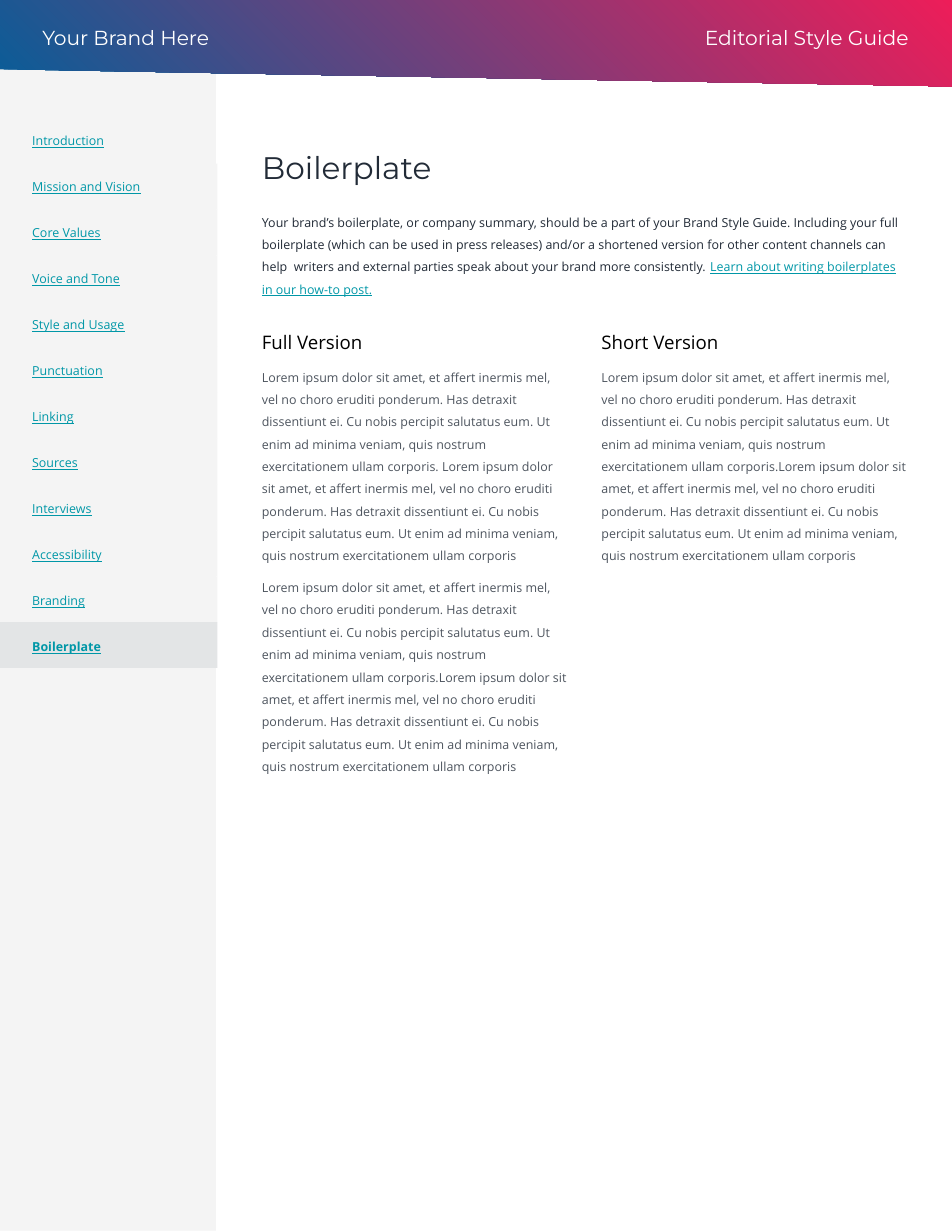
import pptx
import pptx.util
import pptx.dml.color
import pptx.enum.shapes
import pptx.enum.text

Cm = pptx.util.Cm
Pt = pptx.util.Pt
RGBColor = pptx.dml.color.RGBColor
Kind = pptx.enum.shapes.MSO_SHAPE
Align = pptx.enum.text.PP_ALIGN
Anchor = pptx.enum.text.MSO_ANCHOR

WHITE = RGBColor(0xFF, 0xFF, 0xFF)
BLACK = RGBColor(0x00, 0x00, 0x00)
PALE = RGBColor(0xF4, 0xF4, 0xF4)
SILVER = RGBColor(0xE3, 0xE5, 0xE6)
BLUE = RGBColor(0x09, 0x5D, 0x98)
RED = RGBColor(0xED, 0x1D, 0x59)
NAVY = RGBColor(0x22, 0x2B, 0x37)
GREY = RGBColor(0x4E, 0x55, 0x5F)
TEAL = RGBColor(0x00, 0x97, 0xA7)

HEAD = "Montserrat"
BODY = "Open Sans"

LOREM = (
    "Lorem ipsum dolor sit amet, et affert inermis mel, vel no choro eruditi "
    "ponderum. Has detraxit dissentiunt ei. Cu nobis percipit salutatus eum. "
    "Ut enim ad minima veniam, quis nostrum exercitationem ullam corporis"
)
SPACED = LOREM + ". " + LOREM
TIGHT = LOREM + "." + LOREM
INTRO = (
    "Your brand’s boilerplate, or company summary, should be a part of your "
    "Brand Style Guide. Including your full boilerplate (which can be used in "
    "press releases) and/or a shortened version for other content channels can "
    "help  writers and external parties speak about your brand more consistently. "
)
LINK = "Learn about writing boilerplates in our how-to post."
MENU = [
    "Introduction", "Mission and Vision", "Core Values", "Voice and Tone",
    "Style and Usage", "Punctuation", "Linking", "Sources", "Interviews",
    "Accessibility", "Branding", "Boilerplate",
]


class Page:
    def __init__(self, deck):
        self.slide = deck.slides.add_slide(deck.slide_layouts[5])

    def block(self, box, fill, kind=Kind.RECTANGLE):
        shape = self.slide.shapes.add_shape(kind, *map(Cm, box))
        shape.shadow.inherit = False
        shape.line.fill.background()
        if fill:
            shape.fill.solid()
            shape.fill.fore_color.rgb = fill
        return shape

    def banner(self, box):
        shape = self.block(box, None, Kind.FLOWCHART_MANUAL_INPUT)
        shape.rotation = 180
        shape.element.spPr.xfrm.set("flipH", "1")
        shape.fill.gradient()
        shape.fill.gradient_angle = 315
        for stop, color in zip(shape.fill.gradient_stops, (BLUE, RED)):
            stop.color.rgb = color

    def frame(self, shape, pads, anchor=Anchor.TOP):
        frame = shape.text_frame
        frame.word_wrap = True
        frame.auto_size = pptx.enum.text.MSO_AUTO_SIZE.NONE
        frame.vertical_anchor = anchor
        (frame.margin_left, frame.margin_top,
         frame.margin_right, frame.margin_bottom) = map(Cm, pads)
        return frame

    def text(self, box, pads=(0, 0.25, 0, 0)):
        return self.frame(self.slide.shapes.add_textbox(*map(Cm, box)), pads)

    def style(self, para, size, color, face=BODY, lines=1.5, before=0, align=Align.LEFT):
        para.alignment = align
        para.line_spacing = lines
        para.space_before = Pt(before)
        for run in para.runs:
            run.font.name = face
            run.font.size = Pt(size)
            run.font.color.rgb = color

    def title(self, box, words):
        shape = self.slide.shapes.title
        shape.left, shape.top, shape.width, shape.height = map(Cm, box)
        frame = self.frame(shape, (0, 0.18, 0.18, 0.18), Anchor.MIDDLE)
        frame.text = words
        self.style(frame.paragraphs[0], 20, NAVY, HEAD)

    def label(self, left, words, align):
        frame = self.text((left, 0.33, 7.16, 1.09), (0.25,) * 4)
        frame.text = words
        self.style(frame.paragraphs[0], 13, WHITE, HEAD, 1.0, align=align)

    def column(self, left, head, texts):
        frame = self.text((left, 6.99, 6.96, 18.95))
        frame.text = "\n".join([head, *texts])
        first, *rest = frame.paragraphs
        self.style(first, 12, BLACK)
        for para in rest:
            self.style(para, 8, GREY, before=6)

    def intro(self, box, words, link):
        para = self.text(box).paragraphs[0]
        para.text = words
        run = para.add_run()
        run.text = link
        self.style(para, 8, NAVY)
        run.font.color.rgb = TEAL
        run.font.underline = True

    def menu(self, box, names):
        rows = len(names) - 1
        for row in range(rows):
            fill = SILVER if row == rows - 1 else PALE
            self.block((-0.1, 3.71 + 1.04 * row, 5.03, 1.04), fill)
        frame = self.text(box)
        frame.text = "\n".join(names)
        for num, para in enumerate(frame.paragraphs):
            self.style(para, 8, TEAL, lines=1.0, before=20 if num else 0)
            para.runs[0].font.underline = True
        para.runs[0].font.bold = True


def main():
    deck = pptx.Presentation()
    deck.slide_width, deck.slide_height = Cm(21.59), Cm(27.94)
    page = Page(deck)
    page.block((-0.05, -0.03, 4.95, 27.94), PALE)
    page.banner((-0.05, 0, 21.64, 1.96))
    page.label(13.69, "Editorial Style Guide", Align.RIGHT)
    page.label(0.71, "Your Brand Here", Align.LEFT)
    page.title((5.94, 2.77, 14.63, 1.6), "Boilerplate")
    page.column(5.94, "Full Version", [SPACED, TIGHT])
    page.column(13.64, "Short Version", [TIGHT])
    page.menu((0.73, 2.77, 3.35, 21.49), MENU)
    page.intro((5.94, 4.45, 14.63, 2.44), INTRO, LINK)
    deck.save("out.pptx")


if __name__ == "__main__":
    main()
